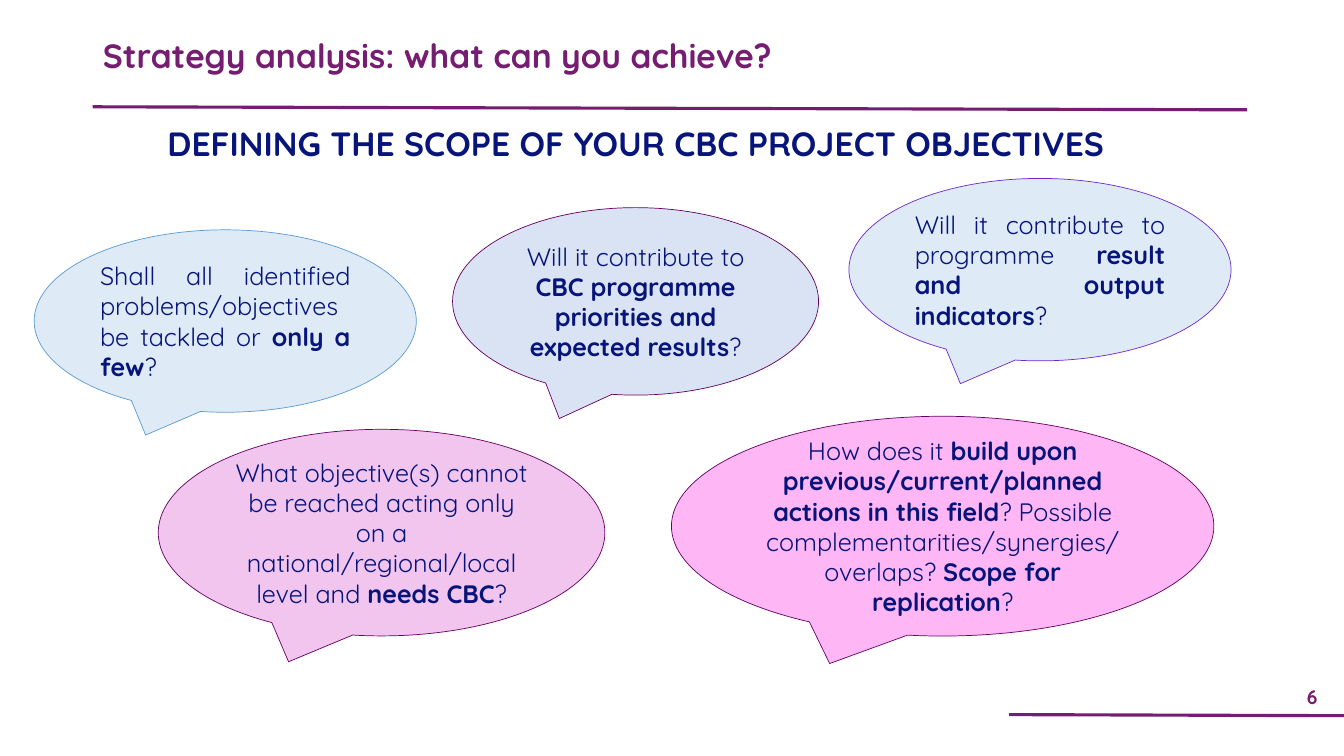
from dataclasses import dataclass

from lxml.etree import SubElement
from pptx import Presentation
from pptx.dml.color import RGBColor
from pptx.enum.shapes import MSO_CONNECTOR, MSO_SHAPE
from pptx.enum.text import MSO_ANCHOR, MSO_AUTO_SIZE, PP_ALIGN
from pptx.oxml.ns import qn
from pptx.shapes.base import BaseShape
from pptx.slide import Slide
from pptx.util import Inches, Pt

WIDE, HIGH = Inches(13.33), Inches(7.5)
FONT = "Quicksand"
COLORS = {
    "plum": "751D70",
    "navy": "07147A",
    "sky": "DEEBF7",
    "azure": "5B9BD5",
    "mist": "DAE3F3",
    "lilac": "F1C5EE",
    "pink": "FFB6F4",
    "grape": "660066",
    "violet": "7029CB",
}


@dataclass(frozen=True)
class Box:
    left: float
    top: float
    width: float
    height: float


@dataclass(frozen=True)
class Bubble:
    box: Box
    fill: str
    edge: str
    text: str
    align: PP_ALIGN = PP_ALIGN.CENTER


@dataclass(frozen=True)
class Rule:
    left: float
    top: float
    right: float
    bottom: float


TITLE = Box(6.9, 4.53, 73, 8.67)
HEADING = Box(6.9, 16.27, 80.8, 73.2)
NUMBER = Box(95.27, 89.73, 4.73, 4.8)

RULES = [
    Rule(6.9, 14.13, 92.8, 14.53),
    Rule(75.09, 94.53, 100, 94.67),
]

BUBBLES = [
    Bubble(Box(2.55, 30.4, 28.43, 24.13), "sky", "azure",
           "Shall all identified problems/objectives be tackled or *only a few*?",
           PP_ALIGN.JUSTIFY),
    Bubble(Box(11.78, 56.8, 33.23, 27.33), "lilac", "grape",
           "What objective(s) cannot be reached acting only on a "
           "national/regional/local level and *needs CBC*?"),
    Bubble(Box(33.68, 27.47, 27.23, 24.8), "mist", "grape",
           "Will it contribute to *CBC programme priorities and expected results*?"),
    Bubble(Box(49.96, 55.07, 40.36, 29.07), "pink", "grape",
           "How does it *build upon previous/current/planned actions in this field*? "
           "Possible complementarities/synergies/overlaps? *Scope for replication*?"),
    Bubble(Box(63.17, 23.6, 28.43, 24.13), "sky", "violet",
           "Will it contribute to programme *result and output indicators*?",
           PP_ALIGN.JUSTIFY),
]


def color(name: str) -> RGBColor:
    return RGBColor.from_string(COLORS[name])


def across(share: float) -> int:
    return round(WIDE * share / 100)


def down(share: float) -> int:
    return round(HIGH * share / 100)


def place(box: Box) -> tuple[int, int, int, int]:
    return across(box.left), down(box.top), across(box.width), down(box.height)


def write(shape: BaseShape, text: str, *, size: int = 18, ink: str = "navy",
          bold: bool = False, align: PP_ALIGN = PP_ALIGN.CENTER,
          anchor: MSO_ANCHOR = MSO_ANCHOR.MIDDLE, space: float = 1.0) -> None:
    frame = shape.text_frame
    frame.word_wrap = True
    frame.auto_size = MSO_AUTO_SIZE.NONE
    frame.vertical_anchor = anchor
    para = frame.paragraphs[0]
    para.alignment = align
    para.line_spacing = space
    para.space_before = Pt(0)
    for index, part in enumerate(text.split("*")):
        run = para.add_run()
        run.text = part
        run.font.name = FONT
        run.font.size = Pt(size)
        run.font.bold = bold or index % 2 == 1
        run.font.color.rgb = color(ink)


def draw_rule(slide: Slide, rule: Rule) -> None:
    line = slide.shapes.add_connector(
        MSO_CONNECTOR.STRAIGHT, across(rule.left), down(rule.top),
        across(rule.right), down(rule.bottom))
    line.line.color.rgb = color("plum")
    line.line.width = Pt(2.25)
    SubElement(line._element.spPr, qn("a:effectLst"))


def draw_bubble(slide: Slide, bubble: Bubble) -> None:
    shape = slide.shapes.add_shape(MSO_SHAPE.OVAL_CALLOUT, *place(bubble.box))
    shape.shadow.inherit = False
    shape.fill.solid()
    shape.fill.fore_color.rgb = color(bubble.fill)
    shape.line.color.rgb = color(bubble.edge)
    shape.line.width = Pt(0.5)
    write(shape, bubble.text, align=bubble.align)


def main() -> None:
    deck = Presentation()
    deck.slide_width, deck.slide_height = WIDE, HIGH
    slide = deck.slides.add_slide(deck.slide_layouts[5])

    title = slide.shapes.title
    title.left, title.top, title.width, title.height = place(TITLE)
    write(title, "Strategy analysis: what can you achieve?", size=24, ink="plum",
          bold=True, align=PP_ALIGN.JUSTIFY, anchor=MSO_ANCHOR.TOP, space=0.9)

    for rule in RULES:
        draw_rule(slide, rule)

    number = slide.shapes.add_textbox(*place(NUMBER))
    write(number, "6", size=14, ink="plum", bold=True)

    heading = slide.shapes.add_textbox(*place(HEADING))
    write(heading, "DEFINING THE SCOPE OF YOUR CBC PROJECT OBJECTIVES", size=24,
          bold=True, anchor=MSO_ANCHOR.TOP, space=0.9)

    for bubble in BUBBLES:
        draw_bubble(slide, bubble)

    deck.save("out.pptx")


if __name__ == "__main__":
    main()
